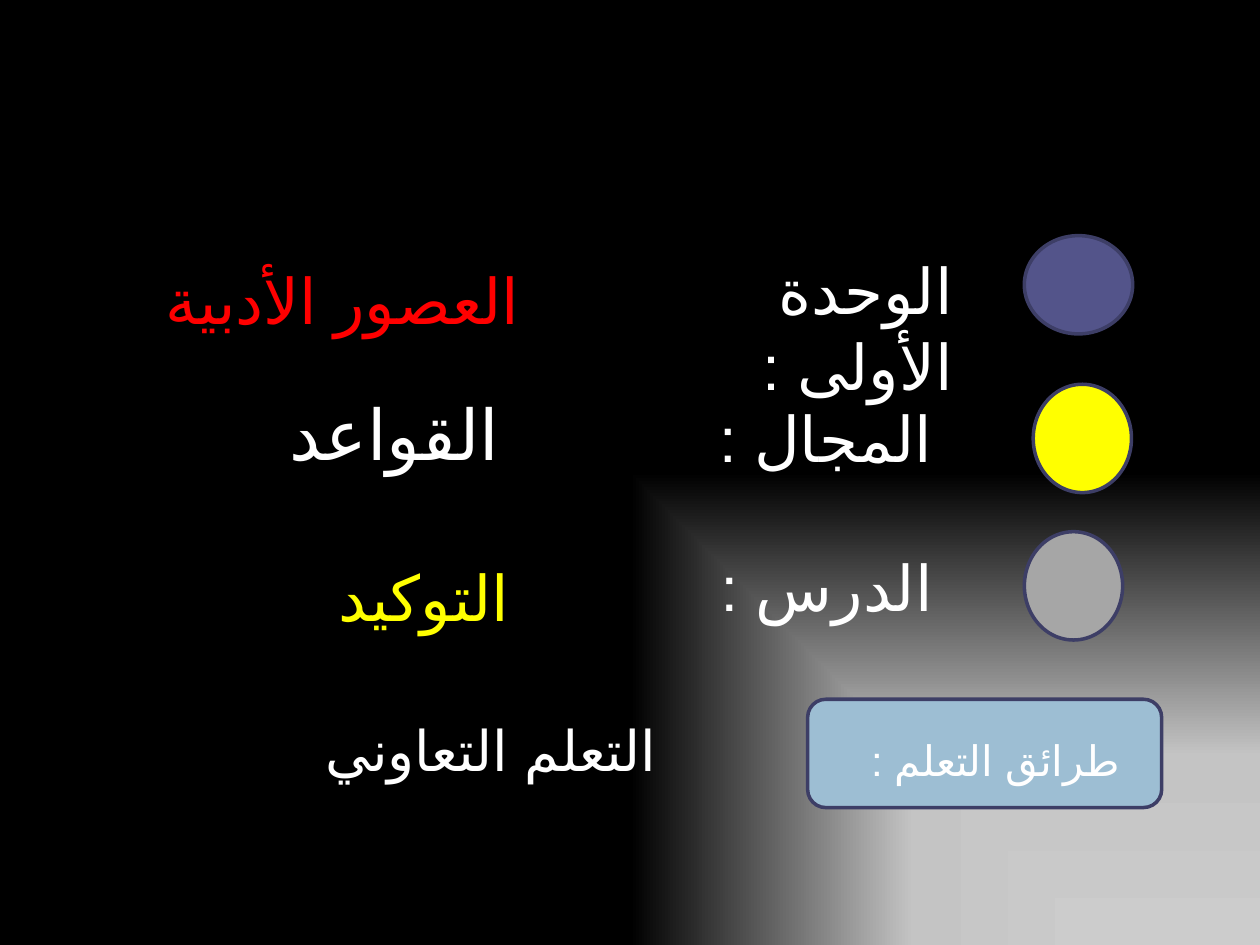
from dataclasses import dataclass

from lxml import etree
from pptx import Presentation
from pptx.dml.color import RGBColor
from pptx.enum.shapes import MSO_SHAPE as Preset
from pptx.enum.text import MSO_AUTO_SIZE as AutoSize, PP_ALIGN as Align
from pptx.oxml import parse_xml
from pptx.oxml.ns import nsdecls, qn
from pptx.util import Inches, Pt


@dataclass(frozen=True)
class Theme:
    font: str = "Calibri"
    arabic_font: str = "Arial"
    language: str = "ar-SA"
    white: str = "FFFFFF"
    red: str = "FF0000"
    yellow: str = "FFFF00"
    indigo: str = "53548A"
    gray: str = "A6A6A6"
    sky: str = "9DBED3"
    outline: str = "3D3E66"
    backdrop: tuple = ((0, "CCCCCC"), (40, "C4C4C4"), (100, "000000"))
    small: int = 24
    medium: int = 32
    large: int = 36
    huge: int = 40


THEME = Theme()

# Each row: marker (preset, box, fill), then label and value (text, box, size, colour)
ROWS = [
    ((Preset.OVAL, (8.13, 1.87, 0.86, 0.78), THEME.indigo),
     ("الوحدة الأولى : ", (5, 1.95, 2.66, 0.71), THEME.large, THEME.white),
     ("العصور الأدبية ", (0.78, 2.03, 3.44, 0.71), THEME.large, THEME.red)),
    ((Preset.OVAL, (8.2, 3.05, 0.78, 0.86), THEME.yellow),
     ("المجال : ", (5.31, 3.12, 2.19, 0.71), THEME.large, THEME.white),
     ("القواعد", (1.64, 3.05, 2.42, 0.77), THEME.huge, THEME.white)),
    ((Preset.OVAL, (8.13, 4.22, 0.78, 0.86), THEME.gray),
     ("الدرس : ", (5.47, 4.3, 2.03, 0.71), THEME.large, THEME.white),
     ("التوكيد ", (1.8, 4.38, 2.34, 0.71), THEME.large, THEME.yellow)),
    ((Preset.ROUNDED_RECTANGLE, (6.41, 5.55, 2.81, 0.86), THEME.sky),
     ("طرائق التعلم : ", (6.72, 5.78, 2.27, 0.5), THEME.small, THEME.white),
     ("التعلم التعاوني ", (1.25, 5.63, 4.06, 0.64), THEME.medium, THEME.white)),
]


def set_backdrop(slide):
    """Fill the background with a gradient glowing from the bottom right corner."""
    stops = "".join(
        f'<a:gs pos="{pos * 1000}"><a:srgbClr val="{color}"/></a:gs>'
        for pos, color in THEME.backdrop
    )
    backdrop = parse_xml(
        f'<p:bg {nsdecls("p", "a")}><p:bgPr><a:gradFill rotWithShape="1">'
        f'<a:gsLst>{stops}</a:gsLst><a:path path="rect">'
        '<a:fillToRect l="100000" t="100000"/></a:path>'
        '<a:tileRect r="-100000" b="-100000"/></a:gradFill>'
        '<a:effectLst/></p:bgPr></p:bg>'
    )
    slide.element.find(qn("p:cSld")).insert(0, backdrop)


def add_marker(slide, preset, box, color):
    marker = slide.shapes.add_shape(preset, *map(Inches, box))
    marker.shadow.inherit = False
    marker.fill.solid()
    marker.fill.fore_color.rgb = RGBColor.from_string(color)
    marker.line.color.rgb = RGBColor.from_string(THEME.outline)
    marker.line.width = Pt(2)


def add_phrase(slide, text, box, size, color):
    """Add one right-to-left paragraph of Arabic text."""
    frame = slide.shapes.add_textbox(*map(Inches, box)).text_frame
    frame.word_wrap = True
    frame.auto_size = AutoSize.SHAPE_TO_FIT_TEXT
    frame.text = text
    paragraph = frame.paragraphs[0]
    paragraph.alignment = Align.RIGHT
    paragraph._p.get_or_add_pPr().set("rtl", "1")
    font = paragraph.runs[0].font
    font.name = THEME.font
    font.size = Pt(size)
    font.color.rgb = RGBColor.from_string(color)
    # Arabic letters take the complex-script font and language
    font._element.set("lang", THEME.language)
    etree.SubElement(font._element, qn("a:cs")).set("typeface", THEME.arabic_font)


def main():
    prs = Presentation()
    prs.slide_width, prs.slide_height = Inches(10), Inches(7.5)
    slide = prs.slides.add_slide(prs.slide_layouts[6])
    set_backdrop(slide)

    # Lesson details, one row each
    for marker, label, value in ROWS:
        add_marker(slide, *marker)
        add_phrase(slide, *label)
        add_phrase(slide, *value)

    prs.save("out.pptx")


if __name__ == "__main__":
    main()
